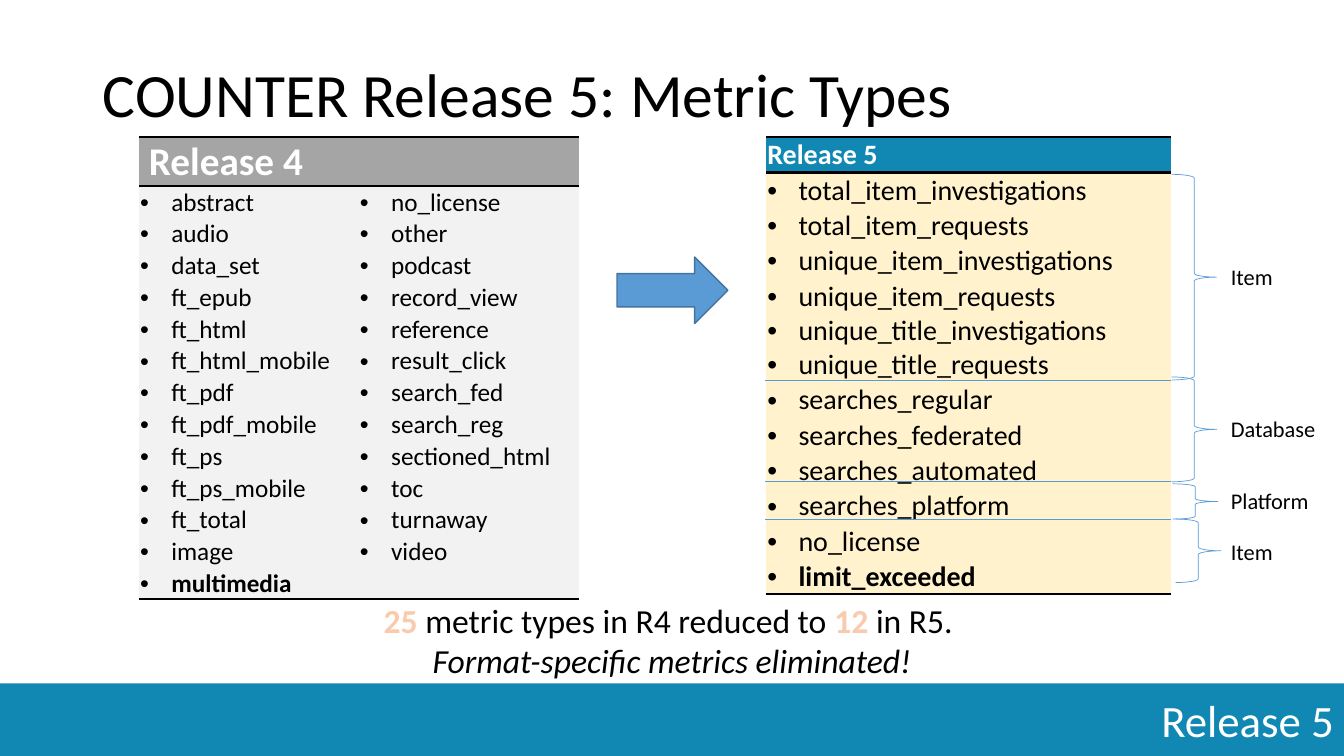
from lxml import etree
from pptx import Presentation
from pptx.dml.color import RGBColor
from pptx.enum.shapes import MSO_CONNECTOR, MSO_SHAPE
from pptx.enum.text import MSO_ANCHOR, MSO_AUTO_SIZE, PP_ALIGN
from pptx.oxml.ns import qn
from pptx.util import Emu, Pt

PX = 9144
FONT = "Calibri"
NO_GRID_STYLE = "{2D5ABB26-0587-4C30-8999-92F81FD0307C}"

BLACK = RGBColor(0x00, 0x00, 0x00)
WHITE = RGBColor(0xFF, 0xFF, 0xFF)
TEAL = RGBColor(0x11, 0x88, 0xB4)
GRAY = RGBColor(0xA5, 0xA5, 0xA5)
LIGHT_GRAY = RGBColor(0xF2, 0xF2, 0xF2)
CREAM = RGBColor(0xFF, 0xF2, 0xCC)
BLUE = RGBColor(0x5B, 0x9B, 0xD5)
DARK_BLUE = RGBColor(0x43, 0x73, 0x9E)
PEACH = RGBColor(0xF8, 0xCB, 0xAD)
ORANGE = RGBColor(0xED, 0x7D, 0x31)

RECT = MSO_SHAPE.RECTANGLE
ARROW = MSO_SHAPE.RIGHT_ARROW
BRACE = MSO_SHAPE.RIGHT_BRACE
STRAIGHT = MSO_CONNECTOR.STRAIGHT
MIDDLE = MSO_ANCHOR.MIDDLE
BOTTOM = MSO_ANCHOR.BOTTOM
LEFT = PP_ALIGN.LEFT
CENTER = PP_ALIGN.CENTER
RIGHT = PP_ALIGN.RIGHT
NO_AUTOFIT = MSO_AUTO_SIZE.NONE

R4_LEFT = ["abstract", "audio", "data_set", "ft_epub", "ft_html", "ft_html_mobile",
           "ft_pdf", "ft_pdf_mobile", "ft_ps", "ft_ps_mobile", "ft_total", "image",
           "multimedia"]
R4_RIGHT = ["no_license", "other", "podcast", "record_view", "reference", "result_click",
            "search_fed", "search_reg", "sectioned_html", "toc", "turnaway", "video", ""]
R5_ROWS = ["total_item_investigations", "total_item_requests", "unique_item_investigations",
           "unique_item_requests\nunique_title_investigations\nunique_title_requests",
           "searches_regular", "searches_federated", "searches_automated",
           "searches_platform", "no_license", "limit_exceeded"]
BOLD_METRICS = {"multimedia", "limit_exceeded"}

BRACES = [(1162, 173, 204), (1162, 374, 104), (1163, 480, 35), (1166, 515, 63)]
LABELS = [("Item", 256), ("Database", 407), ("Platform", 478), ("Item", 529)]
DIVIDERS = [377, 478, 515]


def px(*values):
    return [Emu(v * PX) for v in values]


def add_run(p, text, size, color=BLACK, bold=False, italic=False):
    r = p.add_run()
    r.text = text
    r.font.name = FONT
    r.font.size = Pt(size)
    r.font.color.rgb = color
    r.font.bold = bold
    r.font.italic = italic
    return r


def add_line_xml(parent, tag, color, width):
    ln = etree.Element(qn(tag), w=str(Pt(width)))
    fill = etree.SubElement(ln, qn("a:solidFill"))
    etree.SubElement(fill, qn("a:srgbClr"), val=str(color))
    parent.insert(0, ln)


def add_outlined_run(p, text, size):
    r = add_run(p, text, size, PEACH, bold=True)
    add_line_xml(r._r.get_or_add_rPr(), "a:ln", ORANGE, 1.75)


def add_bullet(p):
    pPr = p._p.get_or_add_pPr()
    pPr.set("marL", str(31 * PX))
    pPr.set("indent", str(-31 * PX))
    etree.SubElement(pPr, qn("a:buFont"), typeface="Arial")
    etree.SubElement(pPr, qn("a:buChar"), char="•")


def format_cell(cell, fill, top=False, bottom=False):
    cell.fill.solid()
    cell.fill.fore_color.rgb = fill
    cell.vertical_anchor = BOTTOM
    cell.margin_left, cell.margin_right, cell.margin_top, cell.margin_bottom = px(1, 1, 1, 0)
    tcPr = cell._tc.get_or_add_tcPr()
    if bottom:
        add_line_xml(tcPr, "a:lnB", BLACK, 2)
    if top:
        add_line_xml(tcPr, "a:lnT", BLACK, 2)


def add_metrics(cell, text, size):
    tf = cell.text_frame
    for i, metric in enumerate(text.split("\n")):
        p = tf.add_paragraph() if i else tf.paragraphs[0]
        if metric:
            add_bullet(p)
            add_run(p, metric, size, bold=metric in BOLD_METRICS)


def add_metric_table(s, x, y, w, heading, columns, heading_size, size, heading_fill,
                     fill, heading_h, line_h):
    rows = list(zip(*columns))
    frame = s.shapes.add_table(len(rows) + 1, len(columns), *px(x, y, w, heading_h))
    table = frame.table
    table.first_row = False
    table.horz_banding = False
    table._tbl.tblPr.find(qn("a:tableStyleId")).text = NO_GRID_STYLE
    table.rows[0].height = Emu(heading_h * PX)
    for c in range(len(columns)):
        format_cell(table.cell(0, c), heading_fill, top=True, bottom=True)
    if len(columns) > 1:
        table.cell(0, 0).merge(table.cell(0, len(columns) - 1))
    add_run(table.cell(0, 0).text_frame.paragraphs[0], heading, heading_size, WHITE, bold=True)
    for i, row in enumerate(rows, 1):
        lines = max(text.count("\n") + 1 for text in row)
        table.rows[i].height = Emu(lines * line_h * PX)
        for c, text in enumerate(row):
            format_cell(table.cell(i, c), fill, bottom=i == len(rows))
            add_metrics(table.cell(i, c), text, size)


def add_preset(s, kind, x, y, w, h, fill=None, line=None, line_w=1):
    sp = s.shapes.add_shape(kind, *px(x, y, w, h))
    sp.shadow.inherit = False
    if fill is None:
        sp.fill.background()
    else:
        sp.fill.solid()
        sp.fill.fore_color.rgb = fill
    if line is None:
        sp.line.fill.background()
    else:
        sp.line.color.rgb = line
        sp.line.width = Pt(line_w)
    return sp


def add_divider(s, x1, x2, y):
    line = s.shapes.add_connector(STRAIGHT, *px(x1, y, x2, y))
    line.line.color.rgb = BLUE
    line.line.width = Pt(0.5)
    etree.SubElement(line._element.spPr, qn("a:effectLst"))


def add_text_box(s, x, y, w, h):
    tf = s.shapes.add_textbox(*px(x, y, w, h)).text_frame
    tf.word_wrap = True
    return tf


def add_title(s, text):
    sp = s.shapes.title
    sp.left, sp.top, sp.width, sp.height = px(92, 40, 1150, 113)
    tf = sp.text_frame
    tf.auto_size = NO_AUTOFIT
    tf.vertical_anchor = MIDDLE
    p = tf.paragraphs[0]
    p.alignment = LEFT
    p.line_spacing = 0.9
    add_run(p, text, 44)


def add_footer(s, text):
    tf = add_preset(s, RECT, 0, 678, 1333, 72, TEAL).text_frame
    tf.vertical_anchor = MIDDLE
    p = tf.paragraphs[0]
    p.alignment = RIGHT
    add_run(p, text, 32, WHITE)


def add_summary(s):
    tf = add_text_box(s, 25, 590, 1283, 91)
    p = tf.paragraphs[0]
    p.alignment = CENTER
    add_outlined_run(p, "25 ", 24)
    add_run(p, "metric types in R4 reduced to ", 24)
    add_outlined_run(p, "12", 24)
    add_run(p, " in R5. ", 24)
    p = tf.add_paragraph()
    p.alignment = CENTER
    add_run(p, "Format-specific metrics eliminated!", 24, italic=True)


def main():
    prs = Presentation()
    prs.slide_width, prs.slide_height = px(1333, 750)
    s = prs.slides.add_slide(prs.slide_layouts[5])
    add_footer(s, "Release 5")
    add_title(s, "COUNTER Release 5: Metric Types")
    add_metric_table(s, 138, 136, 436, " Release 4", [R4_LEFT, R4_RIGHT], 28, 18,
                     GRAY, LIGHT_GRAY, 48, 31)
    add_metric_table(s, 760, 136, 401, "Release 5", [R5_ROWS], 20, 20,
                     TEAL, CREAM, 34, 34)
    add_preset(s, ARROW, 612, 255, 110, 66, BLUE, DARK_BLUE)
    add_summary(s)
    for y in DIVIDERS:
        add_divider(s, 759, 1161, y)
    for text, y in LABELS:
        add_run(add_text_box(s, 1211, y, 110, 37).paragraphs[0], text, 16)
    for x, y, h in BRACES:
        add_preset(s, BRACE, x, y, 45, h, line=BLUE, line_w=0.5)
    prs.save("out.pptx")


if __name__ == "__main__":
    main()
